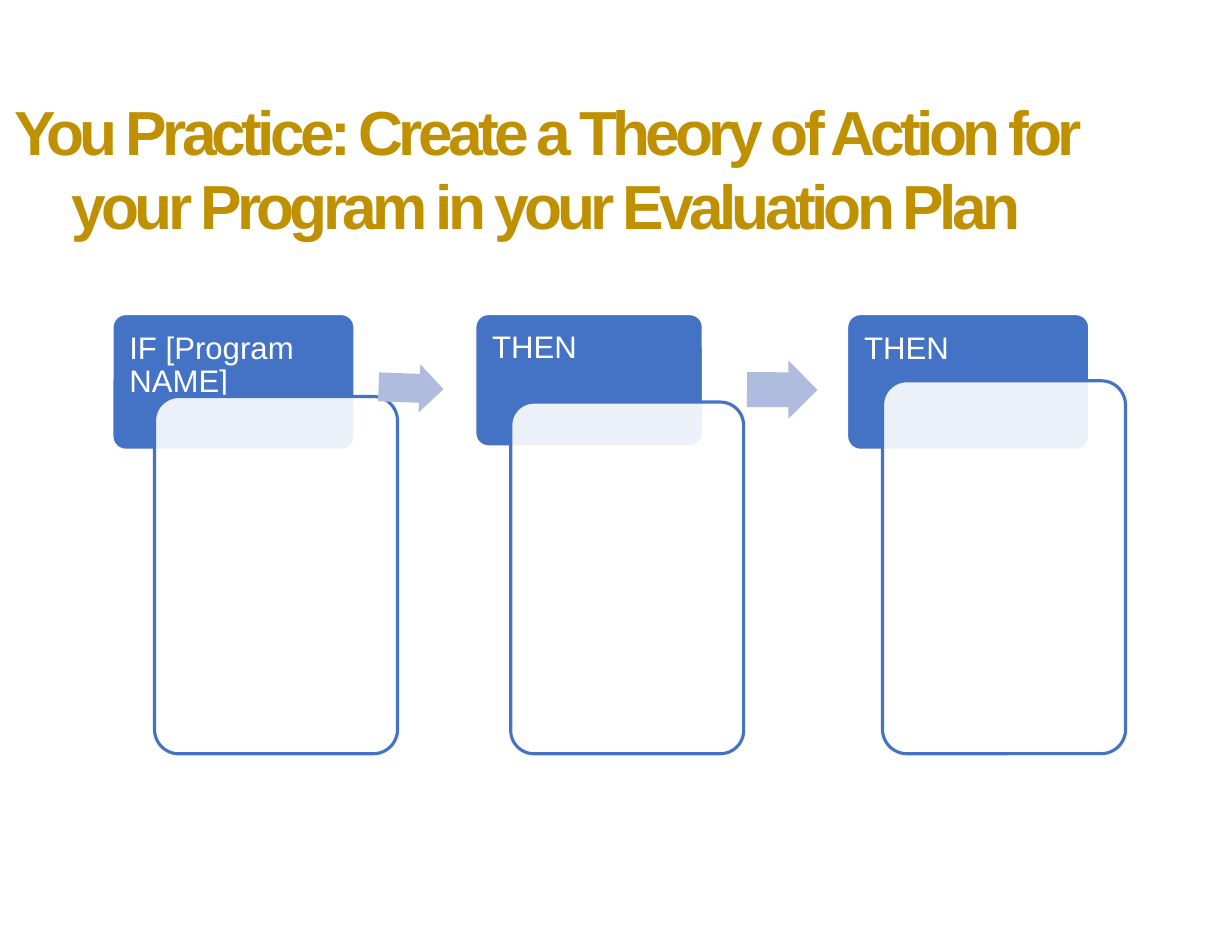
from dataclasses import dataclass

from lxml.etree import SubElement
from pptx import Presentation
from pptx.dml.color import RGBColor
from pptx.enum.shapes import MSO_SHAPE
from pptx.enum.text import MSO_ANCHOR, PP_ALIGN
from pptx.oxml.ns import qn
from pptx.util import Inches, Pt


@dataclass(frozen=True)
class Theme:
    font: str = "Arial"
    gold: str = "BF9000"
    blue: str = "4472C4"
    pale_blue: str = "B0BCDE"
    white: str = "FFFFFF"
    title_size: int = 40
    header_size: int = 20
    outline: int = 2


COLUMNS, ROWS = 110, 85
HEADER_TOP = 28
PANEL_BOTTOM = 67.3
STAGES = [
    dict(label="IF [Program NAME]", left=10, width=21.7, height=12.2,
         panel_left=13.8, panel_top=35.4, panel_width=21.7),
    dict(label="THEN", left=42.4, width=20.4, height=11.9,
         panel_left=45.6, panel_top=35.9, panel_width=20.8),
    dict(label="THEN", left=75.6, width=21.7, height=12.2,
         panel_left=78.8, panel_top=34, panel_width=21.7),
]
ARROWS = [
    dict(box=(33.8, 32.5, 5.8, 4.3), rotation=2.1),
    dict(box=(66.7, 32.2, 6.3, 5.2), rotation=0.2),
]


def write_text(frame, text, *, font, size, color, bold=False, align=PP_ALIGN.LEFT,
               anchor=MSO_ANCHOR.TOP, line_spacing=1.0, tracking=0, insets=(0, 0, 0, 0)):
    frame.word_wrap = True
    frame.vertical_anchor = anchor
    (frame.margin_left, frame.margin_top,
     frame.margin_right, frame.margin_bottom) = map(Inches, insets)
    paragraph = frame.paragraphs[0]
    paragraph.alignment = align
    paragraph.line_spacing = line_spacing
    run = paragraph.add_run()
    run.text = text
    run.font.name = font
    run.font.size = Pt(size)
    run.font.bold = bold
    run.font.color.rgb = RGBColor.from_string(color)
    if tracking:
        run.font._element.set("spc", str(tracking * 100))


class SlideBuilder:
    def __init__(self, deck, theme):
        self.theme = theme
        self.cell_width = deck.slide_width / COLUMNS
        self.cell_height = deck.slide_height / ROWS
        self.slide = deck.slides.add_slide(deck.slide_layouts[6])

    def place(self, column, row, columns, rows):
        return (round(column * self.cell_width), round(row * self.cell_height),
                round(columns * self.cell_width), round(rows * self.cell_height))

    def shape(self, preset, box, fill, line=None, adjustments=()):
        shape = self.slide.shapes.add_shape(preset, *self.place(*box))
        shape.shadow.inherit = False
        shape.fill.solid()
        shape.fill.fore_color.rgb = RGBColor.from_string(fill)
        if line:
            shape.line.color.rgb = RGBColor.from_string(line)
            shape.line.width = Pt(self.theme.outline)
        else:
            shape.line.fill.background()
        for index, value in enumerate(adjustments):
            shape.adjustments[index] = value
        return shape

    def title(self, text, box):
        heading = self.slide.shapes.add_textbox(*self.place(*box))
        write_text(heading.text_frame, text, font=self.theme.font,
                   size=self.theme.title_size, color=self.theme.gold, bold=True,
                   align=PP_ALIGN.CENTER, anchor=MSO_ANCHOR.MIDDLE, tracking=-3)

    def header(self, text, box):
        header = self.shape(MSO_SHAPE.ROUNDED_RECTANGLE, box, self.theme.blue,
                            self.theme.white, [0.1])
        write_text(header.text_frame, text, font=self.theme.font,
                   size=self.theme.header_size, color=self.theme.white,
                   line_spacing=0.9, insets=(0.12, 0.13, 0.12, 0.08))

    def panel(self, box):
        panel = self.shape(MSO_SHAPE.ROUNDED_RECTANGLE, box, self.theme.white,
                           self.theme.blue, [0.1])
        color = panel._element.spPr.find(qn("a:solidFill")).find(qn("a:srgbClr"))
        SubElement(color, qn("a:alpha")).set("val", "90000")

    def arrow(self, box, rotation):
        arrow = self.shape(MSO_SHAPE.RIGHT_ARROW, box, self.theme.pale_blue,
                           adjustments=[0.6, 0.5])
        arrow.rotation = rotation


def main():
    deck = Presentation()
    deck.slide_width, deck.slide_height = Inches(11), Inches(8.5)
    builder = SlideBuilder(deck, Theme())
    builder.title("You Practice: Create a Theory of Action for your Program "
                  "in your Evaluation Plan", (0, 12.4, 97.5, 5.1))
    for stage in STAGES:
        builder.header(stage["label"],
                       (stage["left"], HEADER_TOP, stage["width"], stage["height"]))
        builder.panel((stage["panel_left"], stage["panel_top"], stage["panel_width"],
                       PANEL_BOTTOM - stage["panel_top"]))
    for arrow in ARROWS:
        builder.arrow(**arrow)
    deck.save("out.pptx")


if __name__ == "__main__":
    main()
